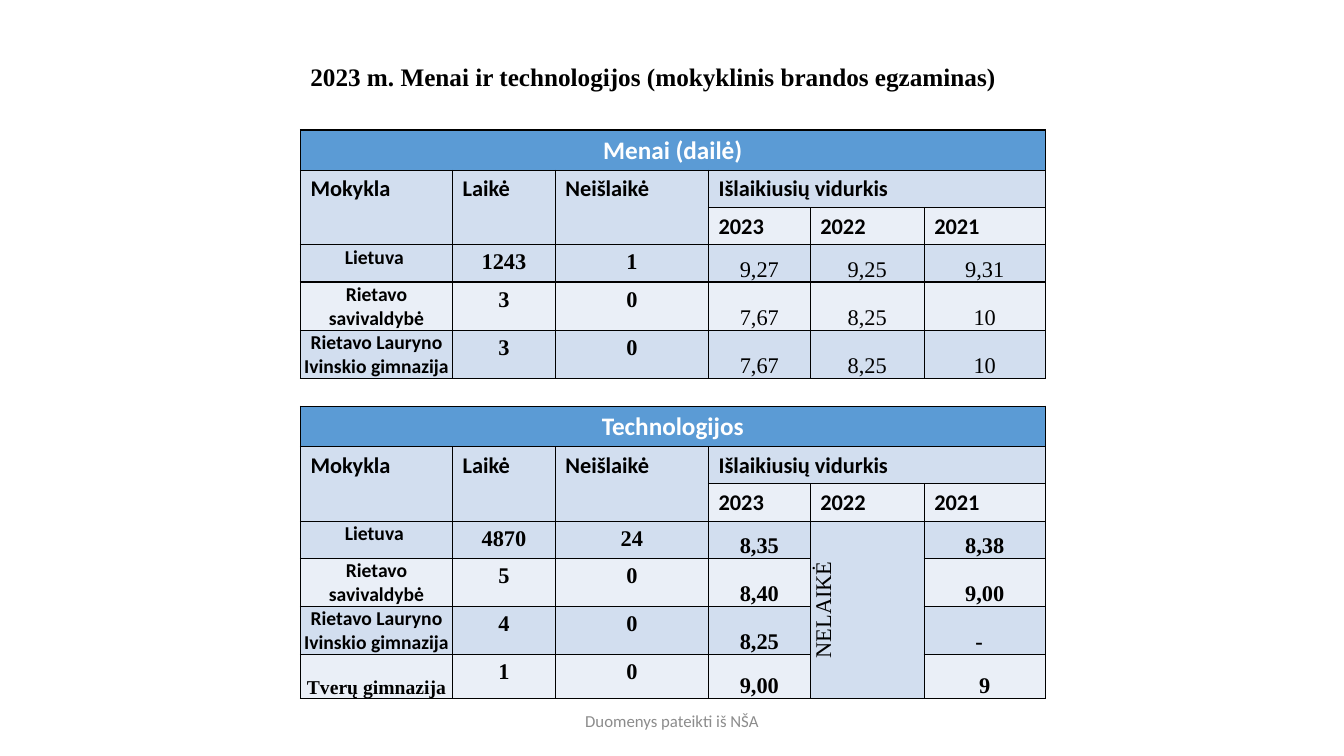
from dataclasses import dataclass
from itertools import product

from lxml.etree import SubElement
from pptx import Presentation
from pptx.dml.color import RGBColor
from pptx.enum.text import MSO_ANCHOR, PP_ALIGN
from pptx.oxml.ns import qn
from pptx.slide import Slide
from pptx.table import Table, _Cell
from pptx.text.text import TextFrame
from pptx.util import Pt

SANS, SERIF = "Calibri", "Times New Roman"
BLACK, WHITE, GREY = "000000", "FFFFFF", "8C8C8C"
HEADER_BLUE, BAND_DARK, BAND_LIGHT = "5B9BD5", "D2DEEF", "EAEFF7"
TABLE_LEFT = 214.6
COLUMN_WIDTHS = [108.7, 73.4, 109.4, 72.7, 81.4, 86.4]
HEADER_ROWS = 3
LOW_ROW, HIGH_ROW = 26.6, 31.5
YEARS = ["2023", "2022", "2021"]


@dataclass
class TextStyle:
    size: float
    font: str = SANS
    bold: bool = True
    color: str = BLACK
    align: PP_ALIGN = PP_ALIGN.CENTER


@dataclass
class School:
    name: str
    passed: str
    failed: str
    averages: list[str]
    anchor: MSO_ANCHOR = MSO_ANCHOR.TOP
    font: str = SANS


@dataclass
class Subject:
    title: str
    top: float
    schools: list[School]
    bold_averages: bool
    absent_year: str = ""
    absent_text: str = ""


SUBJECTS = [
    Subject("Menai (dailė)", 92.9, [
        School("Lietuva ", "1243", "1", ["9,27", "9,25", "9,31"]),
        School("Rietavo savivaldybė", "3", "0", ["7,67", "8,25", "10"]),
        School("Rietavo Lauryno Ivinskio gimnazija", "3", "0",
               ["7,67", "8,25", "10"], MSO_ANCHOR.BOTTOM),
    ], bold_averages=False),
    Subject("Technologijos", 290.2, [
        School("Lietuva ", "4870", "24", ["8,35", "", "8,38"]),
        School("Rietavo savivaldybė", "5", "0", ["8,40", "", "9,00"]),
        School("Rietavo Lauryno Ivinskio gimnazija", "4", "0",
               ["8,25", "", "-  "], MSO_ANCHOR.BOTTOM),
        School("Tverų gimnazija", "1", "0", ["9,00", "", "9"],
               MSO_ANCHOR.BOTTOM, SERIF),
    ], bold_averages=True, absent_year="2022", absent_text="NELAIKĖ"),
]

HEADING = TextStyle(16, align=PP_ALIGN.LEFT)
COUNT = TextStyle(16, SERIF)


def rgb(value: str) -> RGBColor:
    return RGBColor.from_string(value)


def write(frame: TextFrame, text: str, style: TextStyle) -> None:
    paragraph = frame.paragraphs[0]
    paragraph.alignment = style.align
    run = paragraph.add_run()
    run.text = text
    run.font.size = Pt(style.size)
    run.font.name = style.font
    run.font.bold = style.bold
    run.font.color.rgb = rgb(style.color)


def add_text(slide: Slide, left: float, top: float, width: float, height: float,
             text: str, style: TextStyle, anchor: MSO_ANCHOR) -> None:
    box = slide.shapes.add_textbox(Pt(left), Pt(top), Pt(width), Pt(height))
    box.text_frame.word_wrap = True
    box.text_frame.vertical_anchor = anchor
    write(box.text_frame, text, style)


def format_cell(cell: _Cell, fill: str) -> None:
    properties = cell._tc.get_or_add_tcPr()
    for side in ("a:lnL", "a:lnR", "a:lnT", "a:lnB"):
        line = SubElement(properties, qn(side), w=str(Pt(1)))
        solid = SubElement(line, qn("a:solidFill"))
        SubElement(solid, qn("a:srgbClr"), val=BLACK)
    cell.fill.solid()
    cell.fill.fore_color.rgb = rgb(fill)


def write_tight(cell: _Cell, text: str, style: TextStyle, anchor: MSO_ANCHOR) -> None:
    cell.margin_left = cell.margin_right = cell.margin_top = Pt(0.7)
    cell.margin_bottom = Pt(0)
    cell.vertical_anchor = anchor
    write(cell.text_frame, text, style)


def fill_header(table: Table, title: str) -> None:
    table.cell(0, 0).merge(table.cell(0, 5))
    write(table.cell(0, 0).text_frame, title, TextStyle(18, color=WHITE))
    for column, label in enumerate(["Mokykla", "Laikė", "Neišlaikė"]):
        table.cell(1, column).merge(table.cell(2, column))
        write(table.cell(1, column).text_frame, label, HEADING)
    table.cell(1, 3).merge(table.cell(1, 5))
    write(table.cell(1, 3).text_frame, "Išlaikiusių vidurkis", HEADING)
    for column, year in enumerate(YEARS, start=3):
        write(table.cell(2, column).text_frame, year, HEADING)


def add_results(slide: Slide, subject: Subject) -> None:
    row_count = HEADER_ROWS + len(subject.schools)
    heights = [LOW_ROW] * (HEADER_ROWS + 1) + [HIGH_ROW] * (len(subject.schools) - 1)
    frame = slide.shapes.add_table(
        row_count, len(COLUMN_WIDTHS), Pt(TABLE_LEFT), Pt(subject.top),
        Pt(sum(COLUMN_WIDTHS)), Pt(sum(heights)))
    table = frame.table
    table.first_row = table.horz_banding = False
    for column, width in zip(table.columns, COLUMN_WIDTHS):
        column.width = Pt(width)
    for row, height in zip(table.rows, heights):
        row.height = Pt(height)

    # Borders and alternating bands
    for row, column in product(range(row_count), range(len(COLUMN_WIDTHS))):
        band = BAND_DARK if row % 2 else BAND_LIGHT
        format_cell(table.cell(row, column), band if row else HEADER_BLUE)

    fill_header(table, subject.title)

    # One row per school
    average = TextStyle(16, SERIF, subject.bold_averages)
    for row, school in enumerate(subject.schools, start=HEADER_ROWS):
        write_tight(table.cell(row, 0), school.name,
                    TextStyle(14, school.font), school.anchor)
        write(table.cell(row, 1).text_frame, school.passed, COUNT)
        write(table.cell(row, 2).text_frame, school.failed, COUNT)
        for column, value in enumerate(school.averages, start=3):
            if value:
                write_tight(table.cell(row, column), value, average, MSO_ANCHOR.BOTTOM)

    # Year without an exam: one tall cell with upright text
    if subject.absent_year:
        column = 3 + YEARS.index(subject.absent_year)
        cell = table.cell(HEADER_ROWS, column)
        cell.merge(table.cell(row_count - 1, column))
        write_tight(cell, subject.absent_text, TextStyle(16, SERIF, False),
                    MSO_ANCHOR.MIDDLE)
        cell._tc.get_or_add_tcPr().set("vert", "vert270")


def main() -> None:
    presentation = Presentation()
    presentation.slide_width, presentation.slide_height = Pt(960), Pt(540)
    slide = presentation.slides.add_slide(presentation.slide_layouts[6])

    # Title, result tables, footer
    add_text(slide, TABLE_LEFT, 40.3, 643, 28.8,
             "2023 m. Menai ir technologijos (mokyklinis brandos egzaminas)",
             TextStyle(18, SERIF, align=PP_ALIGN.LEFT), MSO_ANCHOR.TOP)
    for subject in SUBJECTS:
        add_results(slide, subject)
    add_text(slide, 318, 500.5, 324, 28.8, "Duomenys pateikti iš NŠA",
             TextStyle(12, bold=False, color=GREY), MSO_ANCHOR.MIDDLE)

    presentation.save("out.pptx")


if __name__ == "__main__":
    main()
